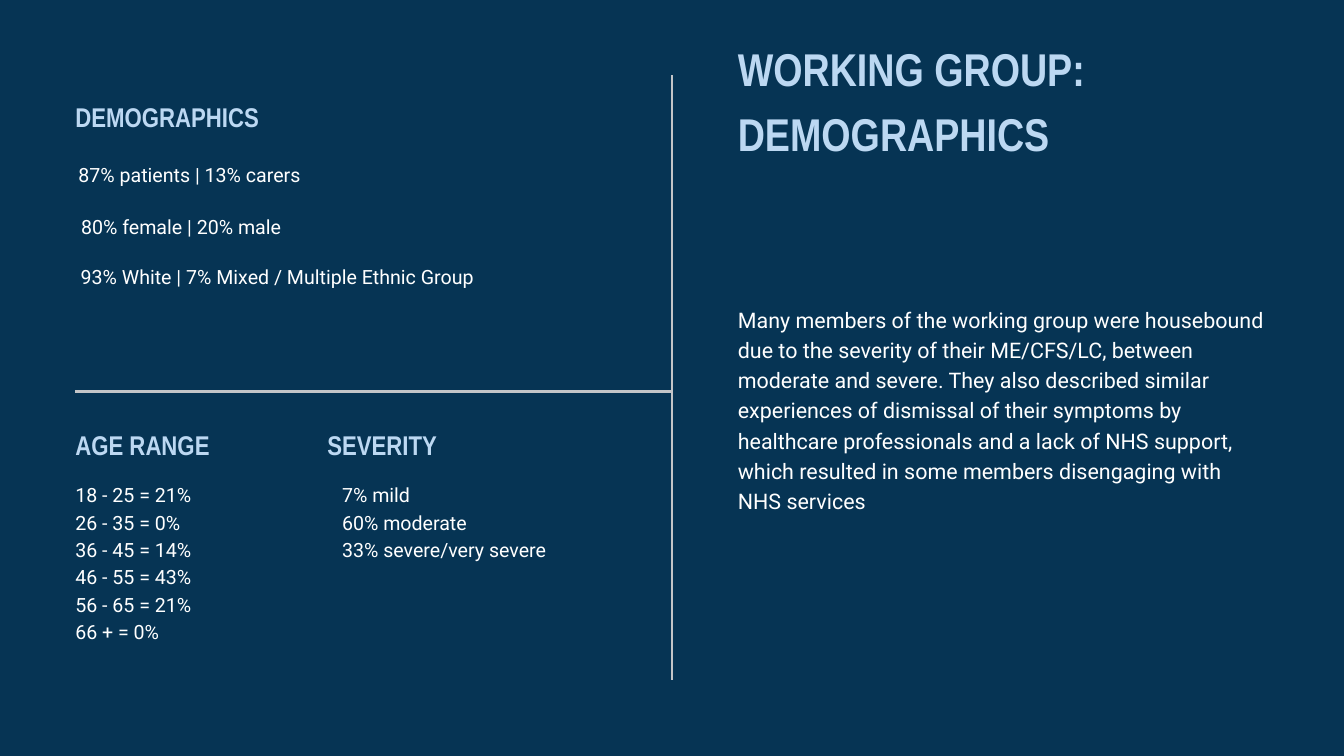
import pptx
import pptx.dml.color
import pptx.enum.shapes
import pptx.enum.text
import pptx.oxml.ns
import pptx.util
from lxml import etree

Inches = pptx.util.Inches
ALIGN = pptx.enum.text.PP_ALIGN

THEME = {
    "background": "063454",
    "rule": "C3C5C8",
    "rule_width": 3,
    "title": {"font": "Arial Narrow", "size": 49.2, "color": "BCD8F2", "bold": True, "spacing": 68.9},
    "heading": {"font": "Arial Narrow", "size": 29, "color": "BCD8F2", "bold": True, "spacing": 40.6},
    "list": {"font": "Roboto", "size": 21, "color": "FFFFFF", "bold": False, "spacing": 29.4},
    "fact": {"font": "Roboto", "size": 21, "color": "FFFFFF", "bold": False, "spacing": 27.3},
    "summary": {"font": "Roboto", "size": 23, "color": "FFFFFF", "bold": False, "spacing": 32.2},
}

TITLE = "WORKING GROUP: DEMOGRAPHICS"
SUMMARY = (
    "Many members of the working group were housebound due to the severity of their "
    "ME/CFS/LC, between moderate and severe. They also described similar experiences of "
    "dismissal of their symptoms by healthcare professionals and a lack of NHS support, "
    "which resulted in some members disengaging with NHS services"
)
FACTS = [
    ("87% patients | 13% carers", "fact", 2.4, 3.4),
    ("80% female | 20% male", "list", 3.14, 3.15),
    ("93% White | 7% Mixed / Multiple Ethnic Group", "fact", 3.91, 6.01),
]
AGES = ["18 - 25 = 21%", "26 - 35 = 0%", "36 - 45 = 14%", "46 - 55 = 43%", "56 - 65 = 21%", "66 + = 0%"]
SEVERITIES = ["7% mild", "60% moderate", "33% severe/very severe"]

PAGE_WIDTH, PAGE_HEIGHT = 20, 11.25
MARGIN = 1.12
MIDDLE = PAGE_WIDTH / 2
RIGHT_COLUMN = 10.98
SEVERITY_LEFT = 4.87
DIVIDER_TOP = 5.83
HEADING_TOPS = {"demographics": 1.41, "breakdown": 6.29}
HEADING_SIZE = (7.92, 0.63)
LIST_TOP = 7.13


def color(value):
    return pptx.dml.color.RGBColor.from_string(value)


def add_text(page, text, *, style, left, top, width, height, align=ALIGN.LEFT, box=None):
    area = [Inches(value) for value in (left, top, width, height)]
    if box is None:
        box = page.shapes.add_textbox(*area)
    box.left, box.top, box.width, box.height = area
    frame = box.text_frame
    frame.word_wrap = True
    frame.auto_size = pptx.enum.text.MSO_AUTO_SIZE.NONE
    frame.vertical_anchor = pptx.enum.text.MSO_ANCHOR.TOP
    frame.margin_left = frame.margin_right = frame.margin_top = frame.margin_bottom = 0
    look = THEME[style]
    lines = [text] if isinstance(text, str) else text
    for index, line in enumerate(lines):
        para = frame.paragraphs[0] if index == 0 else frame.add_paragraph()
        para.alignment = align
        para.line_spacing = pptx.util.Pt(look["spacing"])
        span = para.add_run()
        span.text = line
        span.font.name = look["font"]
        span.font.size = pptx.util.Pt(look["size"])
        span.font.bold = look["bold"]
        span.font.color.rgb = color(look["color"])


def add_heading(page, text, left, row):
    width, height = HEADING_SIZE
    add_text(page, text, style="heading", left=left, top=HEADING_TOPS[row], width=width, height=height)


def add_rule(page, *ends):
    rule = page.shapes.add_connector(
        pptx.enum.shapes.MSO_CONNECTOR.STRAIGHT, *[Inches(value) for value in ends]
    )
    rule.line.color.rgb = color(THEME["rule"])
    rule.line.width = pptx.util.Pt(THEME["rule_width"])
    etree.SubElement(rule._element.spPr, pptx.oxml.ns.qn("a:effectLst"))


def main():
    deck = pptx.Presentation()
    deck.slide_width, deck.slide_height = Inches(PAGE_WIDTH), Inches(PAGE_HEIGHT)
    page = deck.slides.add_slide(deck.slide_layouts.get_by_name("Title Only"))
    page.background.fill.solid()
    page.background.fill.fore_color.rgb = color(THEME["background"])

    add_text(page, TITLE, style="title", left=RIGHT_COLUMN, top=0.47, width=8.39, height=1.88,
             box=page.shapes.title)

    add_heading(page, "DEMOGRAPHICS", MARGIN, "demographics")
    for text, style, top, width in FACTS:
        add_text(page, text, style=style, left=MARGIN, top=top, width=width, height=0.4,
                 align=ALIGN.CENTER)

    add_rule(page, MARGIN, DIVIDER_TOP, MIDDLE, DIVIDER_TOP)
    add_heading(page, "AGE RANGE", MARGIN, "breakdown")
    add_text(page, AGES, style="list", left=MARGIN, top=LIST_TOP, width=2.29, height=2.43)
    add_heading(page, "SEVERITY", SEVERITY_LEFT, "breakdown")
    add_text(page, SEVERITIES, style="list", left=SEVERITY_LEFT + 0.22, top=LIST_TOP,
             width=5.31, height=1.21)

    add_rule(page, MIDDLE, MARGIN, MIDDLE, MARGIN + 9)
    add_text(page, SUMMARY, style="summary", left=RIGHT_COLUMN, top=4.51, width=7.89, height=3.07)

    deck.save("out.pptx")


if __name__ == "__main__":
    main()
